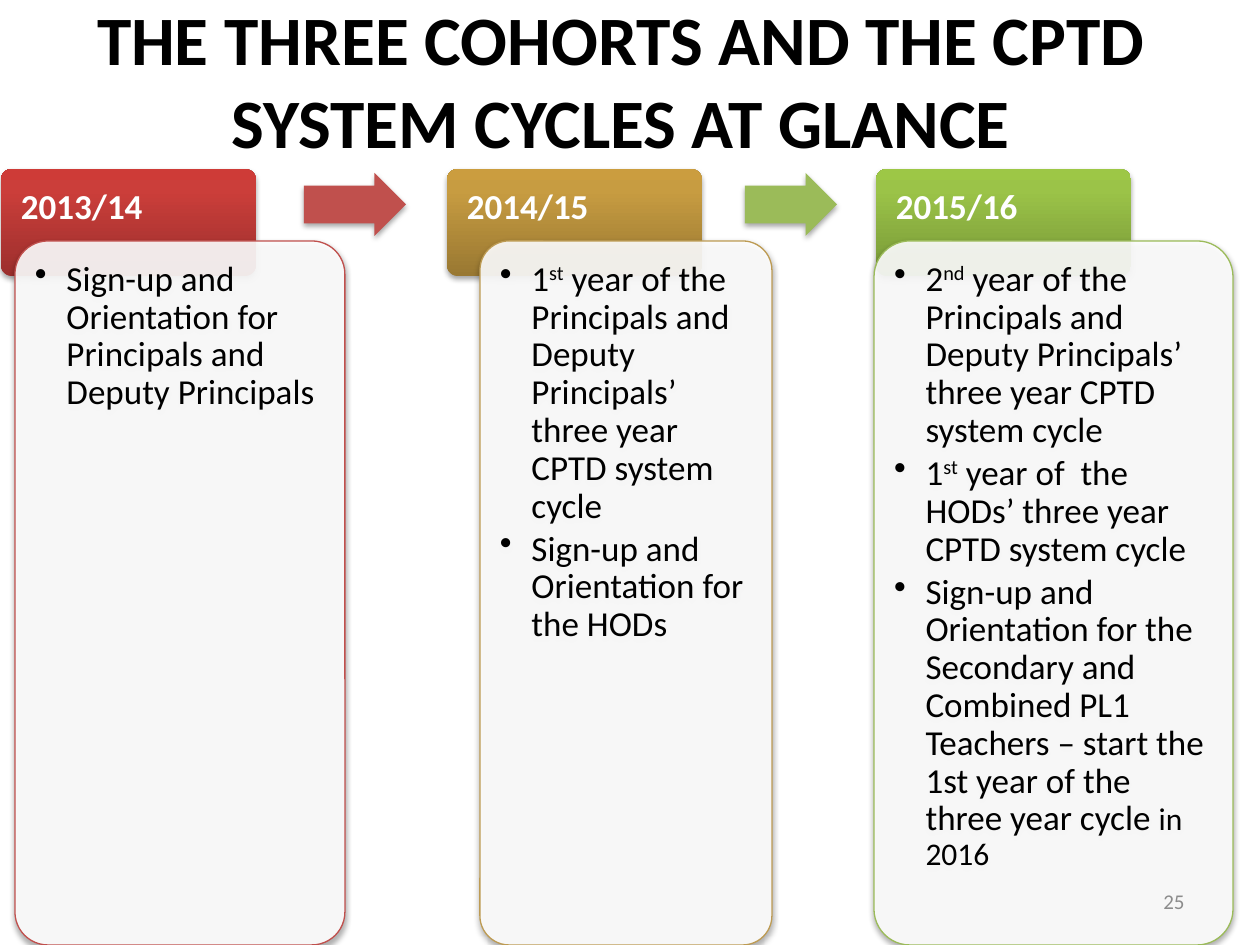
from copy import deepcopy

from lxml import etree
from pptx import Presentation
from pptx import util as u
from pptx.dml.color import RGBColor
from pptx.enum import shapes, text
from pptx.oxml import ns

PX = 914400 / 126
BLACK = RGBColor(0x00, 0x00, 0x00)
WHITE = RGBColor(0xFF, 0xFF, 0xFF)
GREY = RGBColor(0x8C, 0x8C, 0x8C)
RED = RGBColor(0xC0, 0x50, 0x4D)
GOLD = RGBColor(0xBD, 0x9B, 0x53)
GREEN = RGBColor(0x9B, 0xBB, 0x59)
RED_SHADES = [RGBColor(0x9C, 0x2F, 0x2D), RGBColor(0xCB, 0x3E, 0x3A), RGBColor(0xCE, 0x3B, 0x37)]
GOLD_SHADES = [RGBColor(0x99, 0x78, 0x32), RGBColor(0xC7, 0x9C, 0x41), RGBColor(0xCB, 0x9D, 0x3F)]
GREEN_SHADES = [RGBColor(0x77, 0x97, 0x37), RGBColor(0x9B, 0xC3, 0x48), RGBColor(0x9D, 0xC7, 0x46)]

PRINCIPALS = " year of the Principals and Deputy Principals’ three year CPTD system cycle"
# year, header left, card left, card width, line colour, header shades, bullets
# Each bullet is a list of (wording, size, superscript) runs.
COHORTS = [
    ("2013/14", 1, 15, 330, RED, RED_SHADES, [
        [("Sign-up and Orientation for Principals and Deputy Principals", 20, False)]]),
    ("2014/15", 447, 480, 292, GOLD, GOLD_SHADES, [
        [("1", 20, False), ("st", 20, True), (PRINCIPALS, 20, False)],
        [("Sign-up and Orientation for the HODs", 20, False)]]),
    ("2015/16", 876, 874, 359, GREEN, GREEN_SHADES, [
        [("2", 20, False), ("nd", 20, True), (PRINCIPALS, 20, False)],
        [("1", 20, False), ("st", 20, True),
         (" year of  the HODs’ three year CPTD system cycle", 20, False)],
        [("Sign-up and Orientation for the Secondary and Combined PL1 Teachers"
          " – start the 1st year of the three year cycle ", 20, False),
         ("in 2016", 18, False)]]),
]
ARROWS = [(304, 102, RED), (745, 92, GREEN)]


def add_shadowed_shape(kind, left, top, width, height, adjustments):
    """Add a preset shape with a soft shadow and text that starts 20 px inside it."""
    shape = slide.shapes.add_shape(kind, *[round(v * PX) for v in (left, top, width, height)])
    for index, value in enumerate(adjustments):
        shape.adjustments[index] = value
    shape.shadow.inherit = False
    effects = shape._element.spPr.find(ns.qn("a:effectLst"))
    shadow = etree.SubElement(effects, ns.qn("a:outerShdw"), blurRad="40000", dist="23000",
                              dir="5400000", rotWithShape="0")
    color = etree.SubElement(shadow, ns.qn("a:srgbClr"), val="000000")
    etree.SubElement(color, ns.qn("a:alpha"), val="35000")
    shape.line.fill.background()
    # Rounded corners already push the text in by 0.29 of their radius
    inset = round((20 - 0.29 * adjustments[0] * min(width, height)) * PX)
    frame = shape.text_frame
    frame.margin_left = frame.margin_right = frame.margin_top = inset
    frame.margin_bottom = 0
    frame.vertical_anchor = text.MSO_ANCHOR.TOP
    frame.word_wrap = True
    return shape


def format_run(run, size, color, bold=False):
    run.font.name = "Calibri"
    run.font.size = u.Pt(size)
    run.font.color.rgb = color
    run.font.bold = bold


presentation = Presentation()
presentation.slide_width = round(1260 * PX)
presentation.slide_height = round(945 * PX)
slide = presentation.slides.add_slide(presentation.slide_layouts[5])

# Title
title = slide.shapes.title
title.left, title.top, title.width, title.height = [round(v * PX) for v in (54, 0, 1134, 158)]
title.text_frame.text = "THE THREE COHORTS AND THE CPTD SYSTEM CYCLES AT GLANCE"
title.text_frame.auto_size = text.MSO_AUTO_SIZE.NONE
title.text_frame.vertical_anchor = text.MSO_ANCHOR.MIDDLE
format_run(title.text_frame.paragraphs[0].runs[0], 39.6, BLACK, True)

for year, header_left, card_left, card_width, color, shades, bullets in COHORTS:
    # Year header, dark at the bottom
    header = add_shadowed_shape(shapes.MSO_SHAPE.ROUNDED_RECTANGLE, header_left, 169, 255, 107, [0.1])
    header.fill.gradient()
    header.fill.gradient_angle = 90
    stop_list = header._element.spPr.find(".//" + ns.qn("a:gsLst"))
    stop_list.append(deepcopy(stop_list[-1]))
    for stop, position, shade in zip(header.fill.gradient_stops, (0, 0.8, 1), shades):
        stop.position = position
        stop.color.rgb = shade
    header.text_frame.text = year
    paragraph = header.text_frame.paragraphs[0]
    paragraph.alignment = text.PP_ALIGN.LEFT
    paragraph.line_spacing = 0.9
    format_run(paragraph.runs[0], 20, WHITE, True)

    # Translucent card
    card = add_shadowed_shape(shapes.MSO_SHAPE.ROUNDED_RECTANGLE, card_left, 241, card_width, 704, [0.1])
    card.fill.solid()
    card.fill.fore_color.rgb = WHITE
    fill_color = card._element.spPr.find(ns.qn("a:solidFill"))[0]
    etree.SubElement(fill_color, ns.qn("a:alpha"), val="90000")
    card.line.color.rgb = color
    card.line.width = u.Pt(0.75)

    # Bulleted list in the card
    for index, bullet in enumerate(bullets):
        frame = card.text_frame
        paragraph = frame.add_paragraph() if index else frame.paragraphs[0]
        paragraph.alignment = text.PP_ALIGN.LEFT
        paragraph.line_spacing = 0.9
        paragraph.space_after = u.Pt(3)
        properties = paragraph._p.get_or_add_pPr()
        properties.set("marL", "228600")
        properties.set("indent", "-228600")
        etree.SubElement(properties, ns.qn("a:buChar"), char="•")
        for wording, size, superscript in bullet:
            run = paragraph.add_run()
            run.text = wording
            format_run(run, size, BLACK)
            if superscript:
                run.font._element.set("baseline", "30000")

# Arrows between the years
for left, width, color in ARROWS:
    arrow = add_shadowed_shape(shapes.MSO_SHAPE.RIGHT_ARROW, left, 173, width, 63, [0.6, 0.5])
    arrow.fill.solid()
    arrow.fill.fore_color.rgb = color

# Slide number
number = slide.shapes.add_textbox(*[round(v * PX) for v in (903, 876, 294, 50)])
number.text_frame.word_wrap = True
number.text_frame.vertical_anchor = text.MSO_ANCHOR.MIDDLE
number.text_frame.text = "25"
number.text_frame.paragraphs[0].alignment = text.PP_ALIGN.RIGHT
format_run(number.text_frame.paragraphs[0].runs[0], 12, GREY)

presentation.save("out.pptx")
